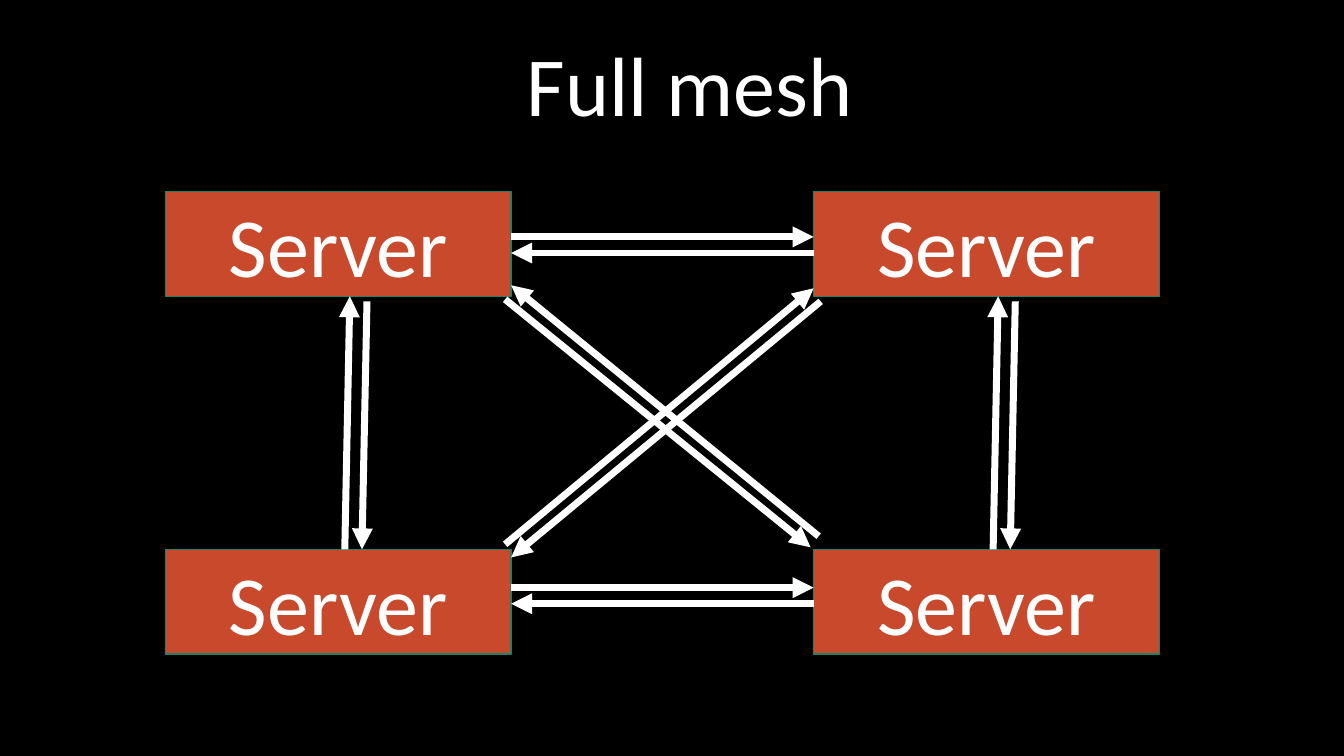
from lxml.etree import SubElement
from pptx import Presentation
from pptx.dml.color import RGBColor
from pptx.enum.shapes import MSO_CONNECTOR, MSO_SHAPE
from pptx.enum.text import MSO_ANCHOR, PP_ALIGN
from pptx.oxml.ns import qn
from pptx.util import Inches, Pt

BLACK = RGBColor(0x00, 0x00, 0x00)
WHITE = RGBColor(0xFF, 0xFF, 0xFF)
RUST = RGBColor(0xC9, 0x49, 0x2C)
GREEN = RGBColor(0x1E, 0x81, 0x68)

COLUMNS = LEFT, RIGHT = 1.64, 8.07
ROWS = TOP, BOTTOM = 1.9, 5.45
SERVER_WIDTH, SERVER_HEIGHT = 3.43, 1.04
PAIR_GAP = 0.16

presentation = Presentation()
presentation.slide_width = Inches(13.33)
presentation.slide_height = Inches(7.5)
slide = presentation.slides.add_slide(presentation.slide_layouts[6])
slide.background.fill.solid()
slide.background.fill.fore_color.rgb = BLACK


def write_centred(shape, text):
    paragraph = shape.text_frame.paragraphs[0]
    paragraph.text = text
    paragraph.alignment = PP_ALIGN.CENTER
    paragraph.font.name = "Calibri"
    paragraph.font.size = Pt(60)
    paragraph.font.color.rgb = WHITE


def add_arrow(start_x, start_y, end_x, end_y):
    """Draw a thick white arrow with its head at the end point."""
    arrow = slide.shapes.add_connector(
        MSO_CONNECTOR.STRAIGHT,
        Inches(start_x), Inches(start_y), Inches(end_x), Inches(end_y))
    arrow.line.color.rgb = WHITE
    arrow.line.width = Pt(5)
    SubElement(arrow.line._get_or_add_ln(), qn("a:tailEnd"), type="triangle")
    SubElement(arrow._element.spPr, qn("a:effectLst"))


# Servers
for top in ROWS:
    for left in COLUMNS:
        server = slide.shapes.add_shape(
            MSO_SHAPE.RECTANGLE, Inches(left), Inches(top),
            Inches(SERVER_WIDTH), Inches(SERVER_HEIGHT))
        server.shadow.inherit = False
        server.fill.solid()
        server.fill.fore_color.rgb = RUST
        server.line.color.rgb = GREEN
        server.line.width = Pt(1)
        server.text_frame.vertical_anchor = MSO_ANCHOR.MIDDLE
        write_centred(server, "Server")

# Links along each row
inner_left = LEFT + SERVER_WIDTH
for link_y in (TOP + 0.45, BOTTOM + 0.38):
    add_arrow(inner_left, link_y, RIGHT, link_y)
    add_arrow(RIGHT, link_y + PAIR_GAP, inner_left, link_y + PAIR_GAP)

# Links along each column, leaning slightly to the right
inner_top = TOP + SERVER_HEIGHT
for left in COLUMNS:
    link_x = left + 1.78
    add_arrow(link_x, BOTTOM, link_x + 0.05, inner_top)
    add_arrow(link_x + 0.22, inner_top + 0.05, link_x + 0.17, BOTTOM)

# Diagonal links
for diagonal in (
    (8.14, 2.99, inner_left, 5.53),
    (5.01, 5.4, RIGHT, 2.86),
    (5.01, 2.97, 8.04, 5.43),
    (8.12, 5.32, inner_left, 2.83),
):
    add_arrow(*diagonal)

title = slide.shapes.add_textbox(
    Inches(2.66), Inches(0.27), Inches(8.36), Inches(1.11))
title.text_frame.word_wrap = True
write_centred(title, "Full mesh")

presentation.save("out.pptx")
